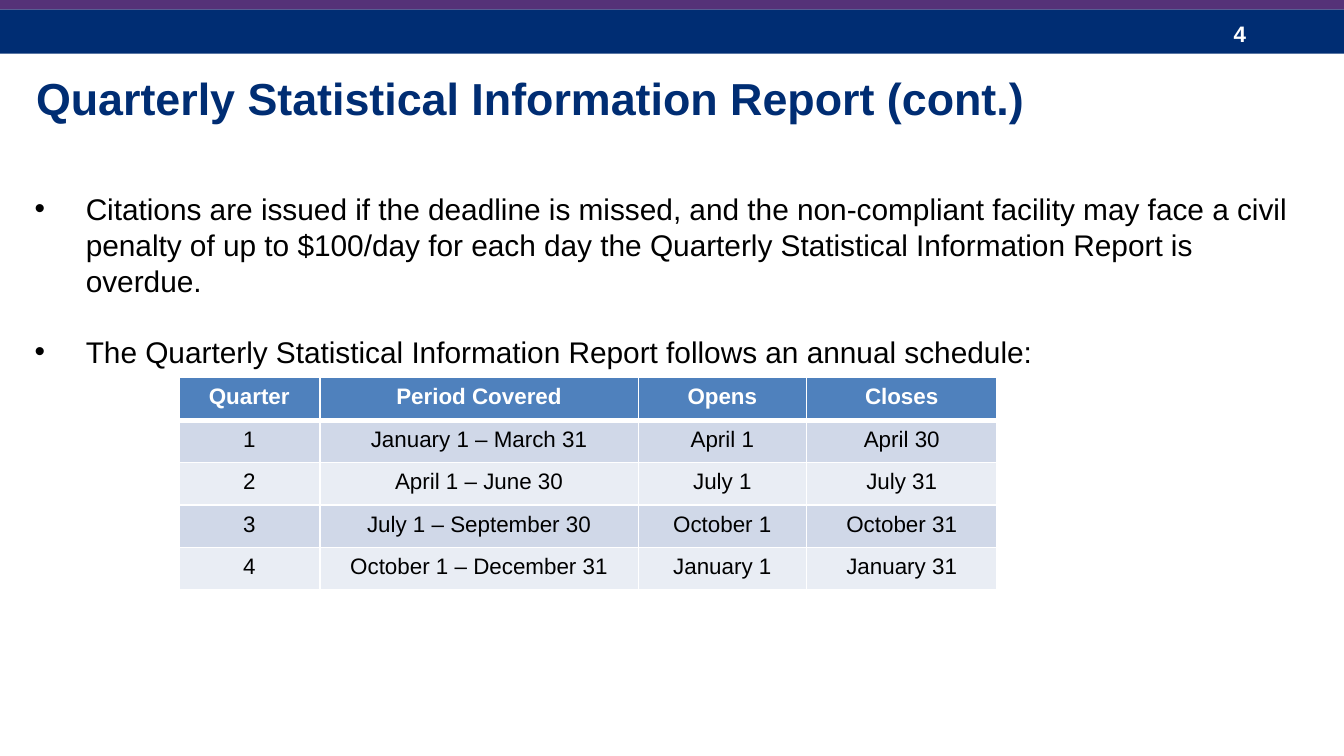
from lxml.etree import SubElement
from pptx import Presentation
from pptx.dml.color import RGBColor
from pptx.enum.shapes import MSO_SHAPE as Shape
from pptx.enum.text import MSO_ANCHOR as Anchor, PP_ALIGN as Align
from pptx.oxml.ns import qn
from pptx.util import Inches, Pt

NAVY, PURPLE, WHITE, BLACK = "002D73", "553278", "FFFFFF", "000000"
HEADER_BLUE, BAND_DARK, BAND_LIGHT = "4F81BD", "D0D8E8", "E9EDF4"


def color(hex_code):
    return RGBColor.from_string(hex_code)


def write(paragraph, text, size=12, ink=BLACK, bold=False, align=Align.LEFT,
          before=0, bullet=None, indent=0.38):
    if bullet:
        props = paragraph._p.get_or_add_pPr()
        props.set("marL", str(Inches(indent)))
        props.set("indent", str(-Inches(indent)))
        SubElement(props, qn("a:buFont"), typeface="Arial")
        SubElement(props, qn("a:buChar"), char=bullet)
    paragraph.alignment = align
    if before:
        paragraph.space_before = Pt(before)
    run = paragraph.add_run()
    run.text = text
    run.font.name = "Arial"
    run.font.size = Pt(size)
    run.font.bold = bold
    run.font.color.rgb = color(ink)


class Deck:
    def __init__(self, width, height):
        self.prs = Presentation()
        self.prs.slide_width, self.prs.slide_height = Inches(width), Inches(height)
        self.slide = self.prs.slides.add_slide(self.prs.slide_layouts[6])

    def bar(self, left, top, width, height, fill):
        band = self.slide.shapes.add_shape(
            Shape.RECTANGLE, *map(Inches, (left, top, width, height)))
        band.shadow.inherit = False
        band.fill.solid()
        band.fill.fore_color.rgb = color(fill)
        band.line.fill.background()

    def text(self, left, top, width, height, lines, inset=0.05,
             anchor=Anchor.TOP, gap=0, **style):
        frame = self.slide.shapes.add_textbox(
            *map(Inches, (left, top, width, height))).text_frame
        frame.word_wrap = True
        frame.vertical_anchor = anchor
        frame.margin_top = Inches(inset)
        for i, line in enumerate(lines):
            paragraph = frame.add_paragraph() if i else frame.paragraphs[0]
            write(paragraph, line, before=gap if i else 0, **style)

    def cell_borders(self, cell, bottom):
        props = cell._tc.get_or_add_tcPr()
        for position, (side, points) in enumerate(
                [("lnL", 1), ("lnR", 1), ("lnT", 1), ("lnB", bottom)]):
            line = props.makeelement(qn(f"a:{side}"), {"w": str(Pt(points))})
            SubElement(SubElement(line, qn("a:solidFill")), qn("a:srgbClr"), val=WHITE)
            props.insert(position, line)

    def table(self, left, top, widths, height, rows):
        grid = self.slide.shapes.add_table(
            len(rows), len(widths), Inches(left), Inches(top),
            Inches(sum(widths)), Inches(height)).table
        for column, width in zip(grid.columns, widths):
            column.width = Inches(width)
        for r, row in enumerate(rows):
            header = r == 0
            fill = HEADER_BLUE if header else BAND_DARK if r % 2 else BAND_LIGHT
            for c, value in enumerate(row):
                cell = grid.cell(r, c)
                cell.fill.solid()
                cell.fill.fore_color.rgb = color(fill)
                self.cell_borders(cell, bottom=3 if header else 1)
                write(cell.text_frame.paragraphs[0], value, bold=header,
                      ink=WHITE if header else BLACK, align=Align.CENTER)


def main():
    # Widescreen page, 16:9
    deck = Deck(10, 10 * 9 / 16)

    # Top band and page number
    deck.bar(0, 0.07, 10, 0.33, NAVY)
    deck.text(9.08, 0.1, 0.75, 0.3, ["4"], ink=WHITE, bold=True, anchor=Anchor.MIDDLE)
    deck.bar(0, -0.02, 10, 0.09, PURPLE)

    # Title
    deck.text(0.17, 0.48, 9.5, 0.5, ["Quarterly Statistical Information Report (cont.)"],
              size=24, ink=NAVY, bold=True)

    # Reporting rules
    rules = [
        "Citations are issued if the deadline is missed, and the non-compliant facility "
        "may face a civil penalty of up to $100/day for each day the Quarterly "
        "Statistical Information Report is overdue.",
        "The Quarterly Statistical Information Report follows an annual schedule:",
    ]
    deck.text(0.16, 1.06, 9.58, 2.46, rules, inset=0.36, gap=19, size=16, bullet="•")

    # Annual schedule
    schedule = [
        ("Quarter", "Period Covered", "Opens", "Closes"),
        ("1", "January 1 – March 31", "April 1", "April 30"),
        ("2", "April 1 – June 30", "July 1", "July 31"),
        ("3", "July 1 – September 30", "October 1", "October 31"),
        ("4", "October 1 – December 31", "January 1", "January 31"),
    ]
    deck.table(1.33, 2.81, [1.05, 2.37, 1.25, 1.42], 1.58, schedule)

    deck.prs.save("out.pptx")


if __name__ == "__main__":
    main()
